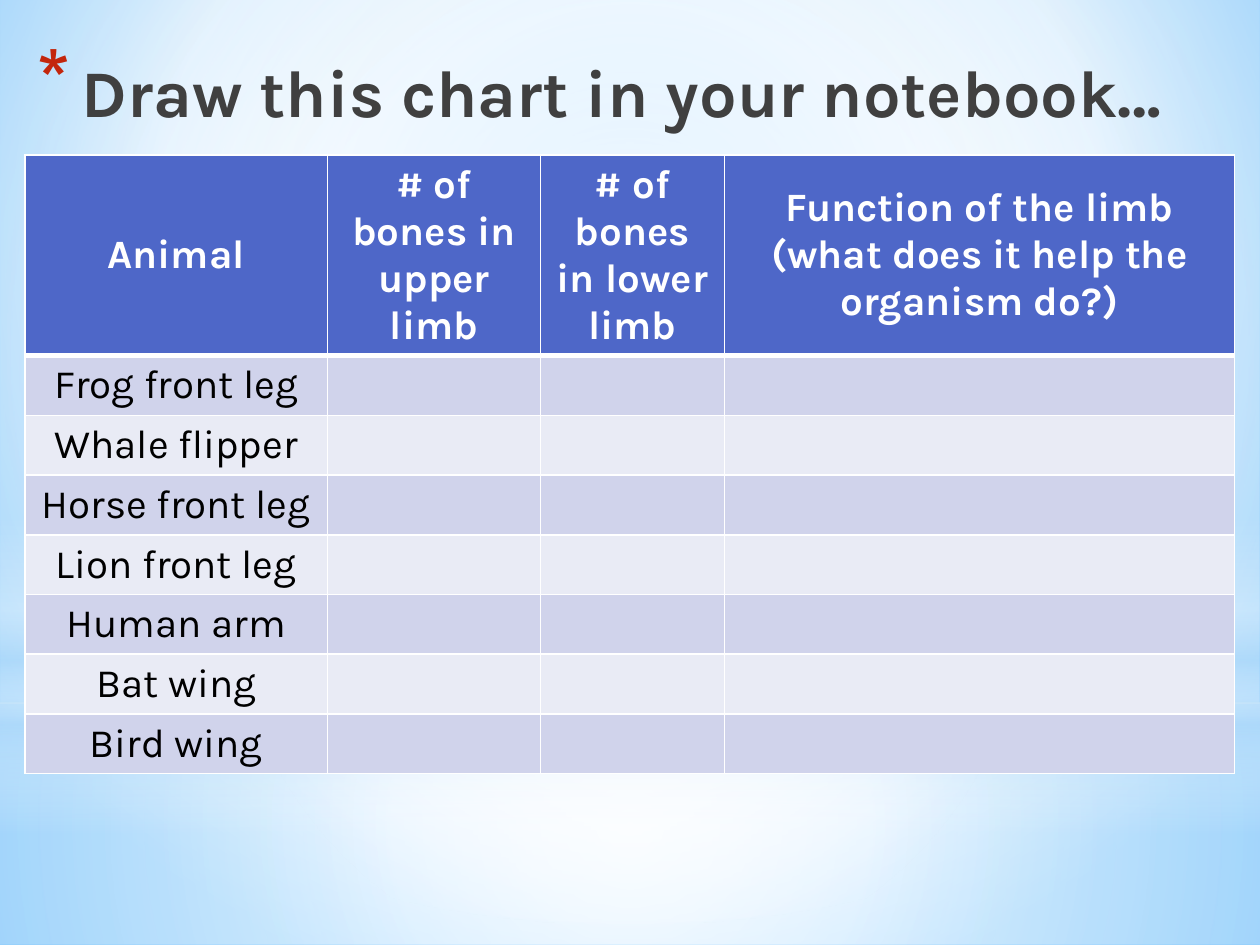
import pptx
import pptx.util
import pptx.dml.color
import pptx.enum.shapes
import pptx.enum.text
import pptx.oxml
import pptx.oxml.ns

Inches, Pt = pptx.util.Inches, pptx.util.Pt
RGB = pptx.dml.color.RGBColor.from_string
ALIGN = pptx.enum.text.PP_ALIGN
ANCHOR = pptx.enum.text.MSO_ANCHOR
SHAPE = pptx.enum.shapes.MSO_SHAPE
NS = pptx.oxml.ns.nsdecls("a")
FONT = "Karla"
COLORS = {
    "white": "FFFFFF", "black": "000000", "gray": "404040", "navy": "212745",
    "pale": "B4DCFA", "sky": "9ED5FF", "azure": "5BB9FF", "bullet": "C3260C",
    "header": "4E67C8", "odd": "D0D3EB", "even": "E9EBF5",
}
DOWN = '<a:lin ang="5400000" scaled="0"/>'


def circle(left, top, right, bottom):
    """Radial gradient focused on a rectangle given in percent insets."""
    return (f'<a:path path="circle"><a:fillToRect l="{left * 1000}" t="{top * 1000}" '
            f'r="{right * 1000}" b="{bottom * 1000}"/></a:path>')


def set_gradient(fill, owner, stops, direction):
    """Fill the owner element; stops are (position %, color, opacity %)."""
    fill.gradient()
    stop_xml = "".join(
        f'<a:gs pos="{pos * 1000}"><a:srgbClr val="{COLORS[color]}">'
        f'<a:alpha val="{opacity * 1000}"/></a:srgbClr></a:gs>'
        for pos, color, opacity in stops)
    old = next(owner.iter(pptx.oxml.ns.qn("a:gradFill")))
    old.getparent().replace(old, pptx.oxml.parse_xml(
        f'<a:gradFill {NS} rotWithShape="1"><a:gsLst>{stop_xml}</a:gsLst>{direction}</a:gradFill>'))


deck = pptx.Presentation()
deck.slide_width, deck.slide_height = Inches(10), Inches(7.5)
slide = deck.slides.add_slide(deck.slide_layouts[5])

# Background and its layers of soft light
set_gradient(slide.background.fill, slide.element,
             [(0, "sky", 100), (60, "white", 100), (100, "azure", 100)],
             circle(20, 10, 20, 60))
center = circle(50, 50, 50, 50)
glows = [
    (SHAPE.RECTANGLE, 5.58, 1.92, center,
     [(0, "white", 91), (37, "white", 76), (100, "pale", 79)]),
    (SHAPE.RECTANGLE, 0, 5.58, center,
     [(0, "white", 89), (48, "white", 62), (100, "pale", 79)]),
    (SHAPE.RECTANGLE, 4.12, 2.5, DOWN,
     [(0, "white", 0), (29, "white", 30), (45, "pale", 40),
      (55, "white", 26), (65, "pale", 60), (100, "white", 0)]),
    (SHAPE.OVAL, 1.75, 5.58, center, [(0, "white", 100), (56, "white", 0)]),
]
for outline, top, height, direction, stops in glows:
    glow = slide.shapes.add_shape(outline, 0, Inches(top), Inches(10), Inches(height))
    glow.shadow.inherit = False
    glow.line.fill.background()
    set_gradient(glow.fill, glow.element, stops, direction)

# Title with its asterisk bullet, brought in front of the light
title = slide.shapes.title
title.element.getparent().append(title.element)
title.left, title.top = Inches(0.2), Inches(0.3)
title.width, title.height = Inches(9.49), Inches(0.85)
title.text_frame.word_wrap = True
title.text_frame.auto_size = pptx.enum.text.MSO_AUTO_SIZE.NONE
title.text_frame.vertical_anchor = ANCHOR.MIDDLE
heading = title.text_frame.paragraphs[0]
heading.alignment = ALIGN.LEFT
heading_props = heading._p.get_or_add_pPr()
heading_props.set("marL", str(Inches(0.35)))
heading_props.set("indent", str(-Inches(0.35)))
for bullet_xml in (
        f'<a:buClr {NS}><a:srgbClr val="{COLORS["bullet"]}"/></a:buClr>',
        f'<a:buSzPct {NS} val="128000"/>',
        f'<a:buChar {NS} char="*"/>'):
    heading_props.append(pptx.oxml.parse_xml(bullet_xml))
words = heading.add_run()
words.text = "Draw this chart in your notebook…"
words.font.name, words.font.size, words.font.bold = FONT, Pt(38), True
set_gradient(words.font.fill, words._r,
             [(0, "black", 100), (40, "gray", 100), (100, "navy", 65)], DOWN)

# Limb comparison table
headers = ["Animal", "# of bones in upper limb", "# of bones in lower limb",
           "Function of the limb (what does it help the organism do?)"]
animals = ["Frog front leg", "Whale flipper", "Horse front leg", "Lion front leg",
           "Human arm", "Bat wing", "Bird wing"]
rows = [headers] + [[animal, "", "", ""] for animal in animals]
limbs = slide.shapes.add_table(len(rows), len(headers), Inches(0.2), Inches(1.23),
                               Inches(9.6), Inches(4.87)).table
for column, width in zip(limbs.columns, [2.4, 1.69, 1.46, 4.05]):
    column.width = Inches(width)

for r, texts in enumerate(rows):
    is_header = r == 0
    limbs.rows[r].height = Inches(1.58 if is_header else 0.47)
    for c, text in enumerate(texts):
        cell = limbs.cell(r, c)
        cell.fill.solid()
        cell.fill.fore_color.rgb = RGB(
            COLORS["header" if is_header else "odd" if r % 2 else "even"])
        if is_header:
            cell.vertical_anchor = ANCHOR.MIDDLE

        # White borders, thicker under the header
        borders = {"lnL": 1, "lnR": 1, "lnT": 3 if r == 1 else 1, "lnB": 3 if is_header else 1}
        for i, (side, width) in enumerate(borders.items()):
            cell._tc.get_or_add_tcPr().insert(i, pptx.oxml.parse_xml(
                f'<a:{side} {NS} w="{Pt(width)}"><a:solidFill>'
                f'<a:srgbClr val="{COLORS["white"]}"/></a:solidFill></a:{side}>'))

        if text:
            label = cell.text_frame.paragraphs[0]
            label.alignment = ALIGN.CENTER
            run = label.add_run()
            run.text = text
            run.font.name, run.font.size, run.font.bold = FONT, Pt(23), is_header
            run.font.color.rgb = RGB(COLORS["white" if is_header else "black"])

deck.save("out.pptx")
